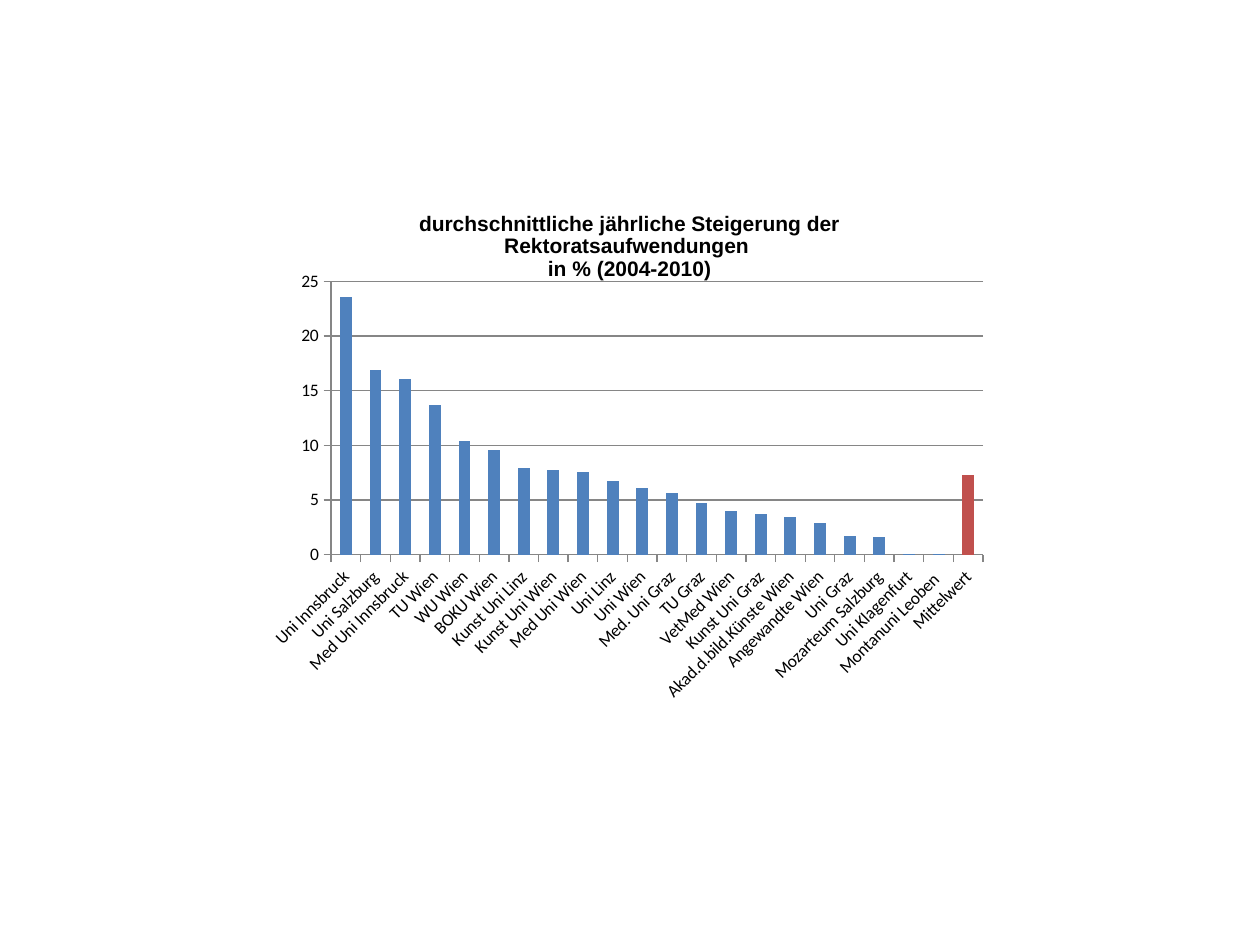
from typing import NamedTuple

from lxml import etree
from pptx import Presentation
from pptx import util as u
from pptx.chart.data import CategoryChartData
from pptx.dml.color import RGBColor
from pptx.enum import chart as c, text as t
from pptx.oxml.ns import qn

COLORS = {"text": "000000", "bar": "4F81BD", "mean": "C0504D", "line": "868686"}
CHART_LEFT, CHART_TOP, CHART_WIDTH, CHART_HEIGHT = 152.8, 108, 414, 324


class Expense(NamedTuple):
    university: str
    increase: float
    color: str = "bar"


EXPENSES = [
    Expense("Uni Innsbruck", 23.6),
    Expense("Uni Salzburg", 16.9),
    Expense("Med Uni Innsbruck", 16.1),
    Expense("TU Wien", 13.7),
    Expense("WU Wien", 10.4),
    Expense("BOKU Wien", 9.6),
    Expense("Kunst Uni Linz", 7.9),
    Expense("Kunst Uni Wien", 7.7),
    Expense("Med Uni Wien", 7.6),
    Expense("Uni Linz", 6.7),
    Expense("Uni Wien", 6.1),
    Expense("Med. Uni Graz", 5.6),
    Expense("TU Graz", 4.7),
    Expense("VetMed Wien", 4),
    Expense("Kunst Uni Graz", 3.7),
    Expense("Akad.d.bild.Künste Wien", 3.4),
    Expense("Angewandte Wien", 2.9),
    Expense("Uni Graz", 1.7),
    Expense("Mozarteum Salzburg", 1.6),
    Expense("Uni Klagenfurt", 0.1),
    Expense("Montanuni Leoben ", 0.1),
    Expense("Mittelwert", 7.3, "mean"),
]


def rgb(name: str) -> RGBColor:
    return RGBColor.from_string(COLORS[name])


def format_font(font, *, size: float, name: str, bold: bool = False) -> None:
    font.size = u.Pt(size)
    font.name = name
    font.bold = bold
    font.color.rgb = rgb("text")


def add_text(paragraph, text: str, **style) -> None:
    paragraph.alignment = t.PP_ALIGN.CENTER
    run = paragraph.add_run()
    run.text = text
    format_font(run.font, **style)


def set_layout(element, target: str = "", **lengths: float) -> None:
    layout = element.find(qn("c:layout"))
    if layout is None:
        layout = etree.Element(qn("c:layout"))
        text = element.find(qn("c:tx"))
        element.insert(0 if text is None else 1, layout)
    for child in list(layout):
        layout.remove(child)
    manual = etree.SubElement(layout, qn("c:manualLayout"))
    values = {"layoutTarget": target} if target else {}
    values |= {"xMode": "edge", "yMode": "edge"}
    for tag, points in lengths.items():
        values[tag] = points / (CHART_WIDTH if tag in "xw" else CHART_HEIGHT)
    for tag, value in values.items():
        etree.SubElement(manual, qn(f"c:{tag}")).set("val", str(value))


def format_axis(axis) -> None:
    axis.major_tick_mark = c.XL_TICK_MARK.OUTSIDE
    axis.minor_tick_mark = c.XL_TICK_MARK.NONE
    axis.format.line.color.rgb = rgb("line")
    format_font(axis.tick_labels.font, size=10, name="Calibri")


def add_title(chart) -> None:
    frame = chart.chart_title.text_frame
    style = {"size": 12, "name": "Arial", "bold": True}
    add_text(frame.paragraphs[0],
             "durchschnittliche jährliche Steigerung der Rektoratsaufwendungen ", **style)
    add_text(frame.add_paragraph(), "in % (2004-2010)", **style)
    set_layout(chart.chart_title._element, x=84.5, y=10.2)


def add_expense_chart(slide, expenses: list[Expense]) -> None:
    data = CategoryChartData()
    data.categories = [expense.university for expense in expenses]
    data.add_series("Series 1", [expense.increase for expense in expenses])
    chart = slide.shapes.add_chart(
        c.XL_CHART_TYPE.COLUMN_CLUSTERED, u.Pt(CHART_LEFT), u.Pt(CHART_TOP),
        u.Pt(CHART_WIDTH), u.Pt(CHART_HEIGHT), data).chart
    format_font(chart.font, size=10, name="Calibri")
    chart.has_legend = False
    add_title(chart)

    plot = chart.plots[0]
    plot.gap_width = 150
    plot.vary_by_categories = False
    series = plot.series[0]
    series.format.fill.solid()
    series.format.fill.fore_color.rgb = rgb("bar")
    for index, expense in enumerate(expenses):
        if expense.color != "bar":
            fill = series.points[index].format.fill
            fill.solid()
            fill.fore_color.rgb = rgb(expense.color)

    format_axis(chart.category_axis)
    label_body = chart.category_axis._element.find(qn("c:txPr")).find(qn("a:bodyPr"))
    label_body.set("rot", "-2700000")
    label_body.set("vert", "horz")

    values = chart.value_axis
    format_axis(values)
    values.minimum_scale, values.maximum_scale, values.major_unit = 0, 25, 5
    values.has_major_gridlines = True
    values.major_gridlines.format.line.color.rgb = rgb("line")

    plot_area = chart._chartSpace.find(qn("c:chart")).find(qn("c:plotArea"))
    set_layout(plot_area, "inner", x=36.4, y=52.8, w=372.6, h=156.2)


def main() -> None:
    presentation = Presentation()
    presentation.slide_width, presentation.slide_height = u.Pt(720), u.Pt(540)
    slide = presentation.slides.add_slide(presentation.slide_layouts[6])
    add_expense_chart(slide, EXPENSES)
    presentation.save("out.pptx")


if __name__ == "__main__":
    main()
